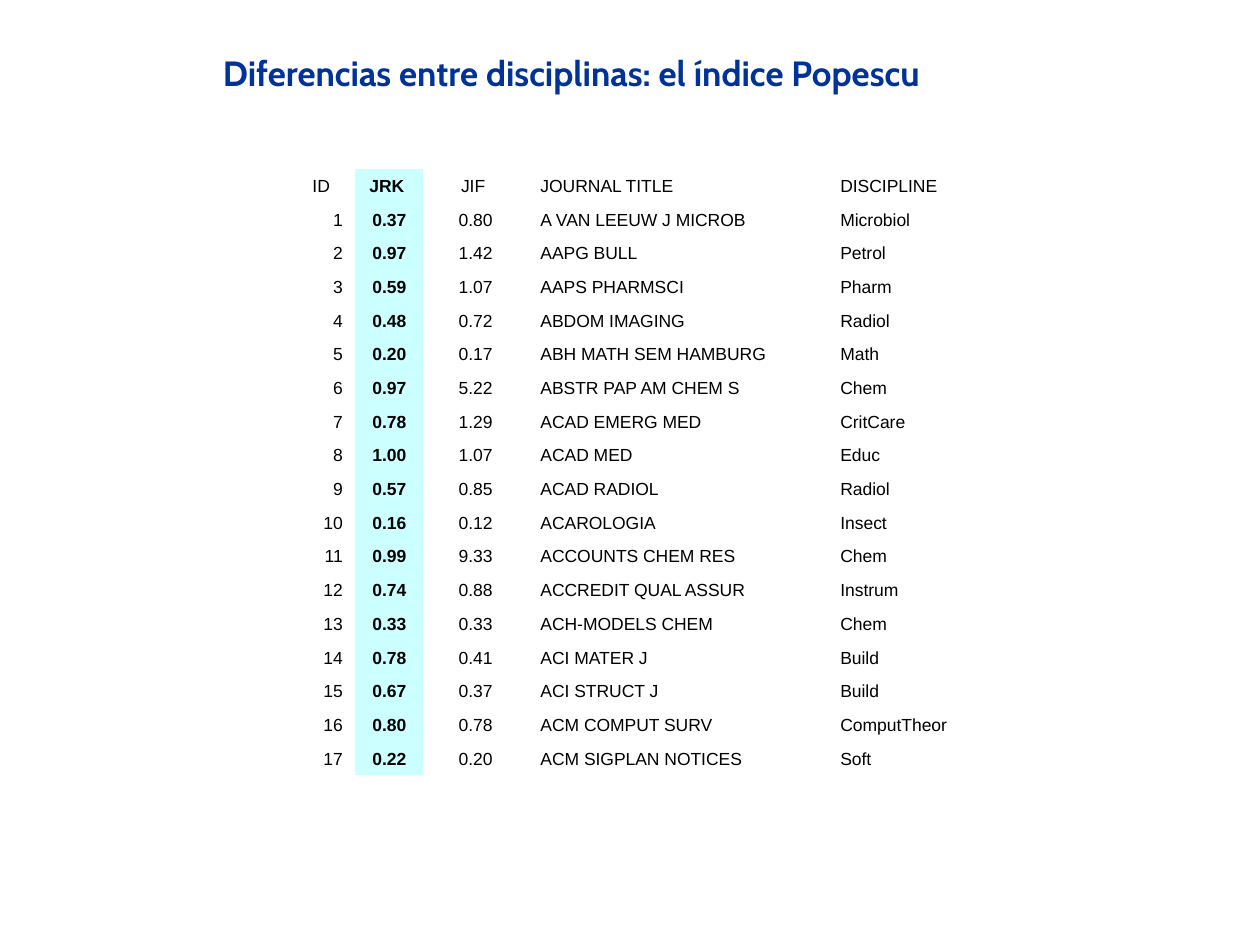
from pptx import Presentation
from pptx import util as u
from pptx.dml.color import RGBColor
from pptx.enum import text

NAVY = RGBColor(0x00, 0x33, 0x99)
BLACK = RGBColor(0, 0, 0)
PALE_CYAN = RGBColor(0xCC, 0xFF, 0xFF)
NO_GRID_STYLE = "{2D5ABB26-0587-4C30-8999-92F81FD0307C}"

# Content
HEADING = "Diferencias entre disciplinas: el índice Popescu"
HEADER = ("ID", "JRK ", "JIF ", "JOURNAL TITLE", "DISCIPLINE")
JOURNALS = [
    ("0.37", "0.80", "A VAN LEEUW J MICROB", "Microbiol"),
    ("0.97", "1.42", "AAPG BULL", "Petrol"),
    ("0.59", "1.07", "AAPS PHARMSCI", "Pharm"),
    ("0.48", "0.72", "ABDOM IMAGING", "Radiol"),
    ("0.20", "0.17", "ABH MATH SEM HAMBURG", "Math"),
    ("0.97", "5.22", "ABSTR PAP AM CHEM S", "Chem"),
    ("0.78", "1.29", "ACAD EMERG MED", "CritCare"),
    ("1.00", "1.07", "ACAD MED", "Educ"),
    ("0.57", "0.85", "ACAD RADIOL", "Radiol"),
    ("0.16", "0.12", "ACAROLOGIA", "Insect"),
    ("0.99", "9.33", "ACCOUNTS CHEM RES", "Chem"),
    ("0.74", "0.88", "ACCREDIT QUAL ASSUR", "Instrum"),
    ("0.33", "0.33", "ACH-MODELS CHEM", "Chem"),
    ("0.78", "0.41", "ACI MATER J", "Build"),
    ("0.67", "0.37", "ACI STRUCT J", "Build"),
    ("0.80", "0.78", "ACM COMPUT SURV", "ComputTheor"),
    ("0.22", "0.20", "ACM SIGPLAN NOTICES", "Soft"),
]
rows = [HEADER] + [(str(n), *journal) for n, journal in enumerate(JOURNALS, 1)]

# Column layout
WIDTHS = (0.44, 0.54, 0.83, 2.38, 1.05)
LEFT, CENTER, RIGHT = text.PP_ALIGN.LEFT, text.PP_ALIGN.CENTER, text.PP_ALIGN.RIGHT
ALIGNMENTS = (RIGHT, CENTER, CENTER, LEFT, LEFT)
JRK_COLUMN = 1
TABLE_HEIGHT = 4.81


def style(paragraph, font_name, size, color, bold):
    for run in paragraph.runs:
        run.font.name = font_name
        run.font.size = u.Pt(size)
        run.font.color.rgb = color
        run.font.bold = bold


prs = Presentation()
prs.slide_width, prs.slide_height = u.Inches(10), u.Inches(7.5)
slide = prs.slides.add_slide(prs.slide_layouts[6])

# Heading
heading = slide.shapes.add_textbox(
    u.Inches(1.67), u.Inches(0.36), u.Inches(6.34), u.Inches(0.43)).text_frame
heading.word_wrap = False
heading.auto_size = text.MSO_AUTO_SIZE.SHAPE_TO_FIT_TEXT
heading.text = HEADING
style(heading.paragraphs[0], "Cabin", 20, NAVY, True)

# Journal table, without grid or banding
frame = slide.shapes.add_table(
    len(rows), len(WIDTHS), u.Inches(2.38), u.Inches(1.34),
    u.Inches(sum(WIDTHS)), u.Inches(TABLE_HEIGHT))
ranking = frame.table
ranking.first_row = ranking.horz_banding = False
ranking._tbl.tblPr[0].text = NO_GRID_STYLE
for column, width in zip(ranking.columns, WIDTHS):
    column.width = u.Inches(width)

for r, row in enumerate(rows):
    ranking.rows[r].height = u.Inches(TABLE_HEIGHT / len(rows))
    for c, value in enumerate(row):
        cell = ranking.cell(r, c)
        cell.text = value
        cell.vertical_anchor = text.MSO_ANCHOR.BOTTOM
        if c == JRK_COLUMN:
            cell.fill.solid()
            cell.fill.fore_color.rgb = PALE_CYAN
        else:
            cell.fill.background()
        paragraph = cell.text_frame.paragraphs[0]
        paragraph.alignment = LEFT if (r, c) == (0, 0) else ALIGNMENTS[c]
        style(paragraph, "Arial", 10, BLACK, c == JRK_COLUMN)

prs.save("out.pptx")
